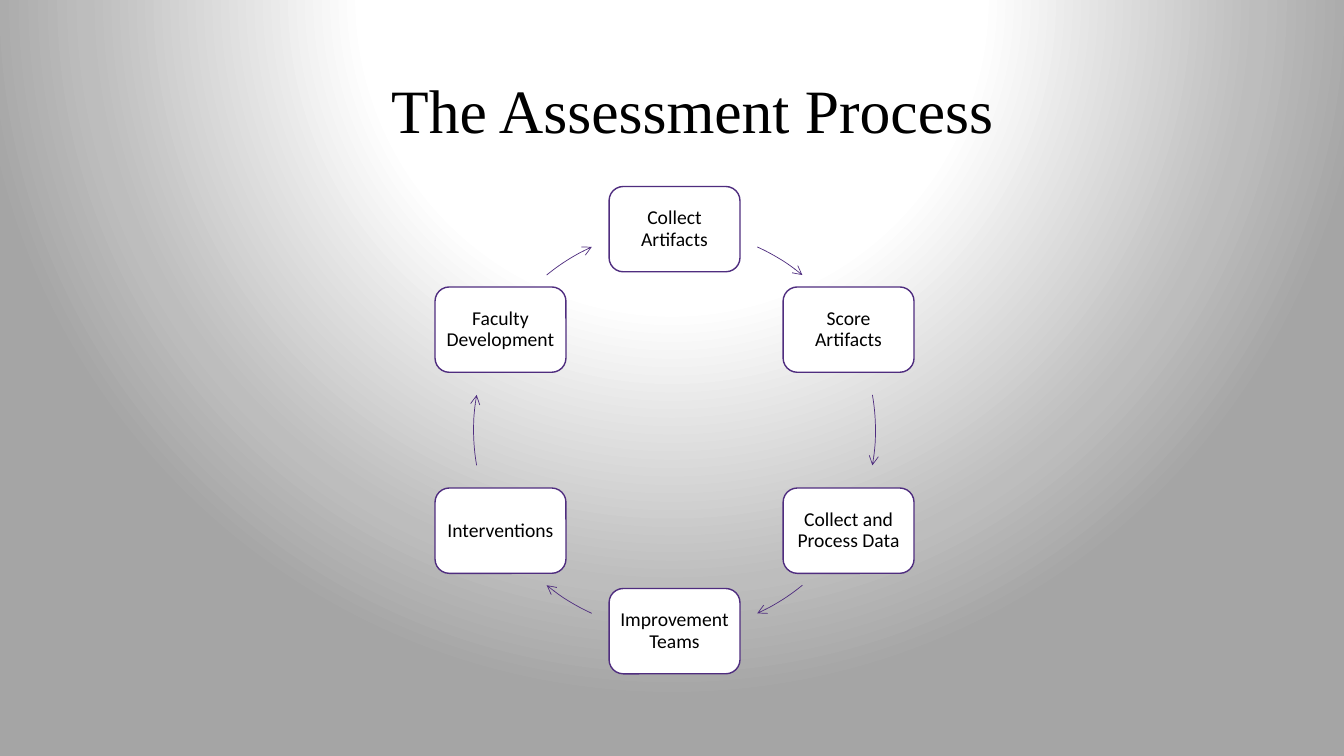
from math import cos, radians, sin
from pptx import Presentation
from pptx.dml.color import RGBColor
from pptx.enum.shapes import MSO_SHAPE
from pptx.enum.text import MSO_ANCHOR, PP_ALIGN
from pptx.oxml import parse_xml
from pptx.oxml.ns import nsdecls, qn
from pptx.util import Cm, Pt

PURPLE = "4F2D7F"
STEPS = ["Collect Artifacts", "Score Artifacts", "Collect and Process Data",
         "Improvement Teams", "Interventions", "Faculty Development"]
SPANS = [(24.3, 39.5), (79.9, 100.1), (140.5, 155.7)]
STOPS = [(0, "FFFFFF"), (40, "FFFFFF"), (76, "BDBDBD"), (91, "A5A5A5")]


def color(code):
    return RGBColor.from_string(code)


def backdrop(slide):
    slide.background.fill.gradient()
    old = next(slide.element.iter(qn("a:gradFill")))
    stops = "".join(f'<a:gs pos="{pos * 1000}"><a:srgbClr val="{code}"/></a:gs>'
                    for pos, code in STOPS)
    new = parse_xml(
        f'<a:gradFill {nsdecls("a")} rotWithShape="1"><a:gsLst>{stops}</a:gsLst>'
        '<a:path path="circle"><a:fillToRect l="50000" t="-80000" r="50000" '
        'b="180000"/></a:path></a:gradFill>')
    old.getparent().replace(old, new)


def write(frame, text, font, size):
    frame.word_wrap = True
    frame.vertical_anchor = MSO_ANCHOR.MIDDLE
    para = frame.paragraphs[0]
    para.text = text
    para.line_spacing = 0.9
    para.font.name = font
    para.font.size = Pt(size)
    para.font.color.rgb = color("000000")
    return para


def title(slide, left, top, width, height):
    box = slide.shapes.add_textbox(Cm(left), Cm(top), Cm(width), Cm(height))
    box.text_frame.margin_left = Cm(3.43)
    write(box.text_frame, "The Assessment Process", "Times New Roman", 44)


def shape(slide, kind, box, weight):
    item = slide.shapes.add_shape(kind, *map(Cm, box))
    item.shadow.inherit = False
    item.line.color.rgb = color(PURPLE)
    item.line.width = Pt(weight)
    return item


def node(slide, text, box):
    card = shape(slide, MSO_SHAPE.ROUNDED_RECTANGLE, box, 1)
    card.fill.solid()
    card.fill.fore_color.rgb = color("FFFFFF")
    frame = card.text_frame
    frame.margin_left = frame.margin_right = Cm(0.15)
    frame.margin_top = frame.margin_bottom = Cm(0.15)
    write(frame, text, "Calibri", 14).alignment = PP_ALIGN.CENTER


def arrow(slide, box, start, end):
    arc = shape(slide, MSO_SHAPE.ARC, box, 0.5)
    arc.fill.background()
    for i, angle in enumerate((start, end)):
        arc.adjustments[i] = (angle - 90) % 360 * 0.6
    arc.line._get_or_add_ln().append(
        parse_xml(f'<a:tailEnd {nsdecls("a")} type="arrow"/>'))


def cycle(slide, left, top, width, height):
    wide, high = 3.3, 2.15
    mid_x, mid_y = left + width / 2, top + height / 2
    radius = (height - high) / 2
    ring = (mid_x - radius, mid_y - radius, radius * 2, radius * 2)
    for i, text in enumerate(STEPS):
        turn = radians(i * 360 / len(STEPS))
        x, y = mid_x + radius * sin(turn), mid_y - radius * cos(turn)
        node(slide, text, (x - wide / 2, y - high / 2, wide, high))
        half, part = divmod(i, len(SPANS))
        start, end = SPANS[part]
        arrow(slide, ring, half * 180 + start, half * 180 + end)


def main():
    deck = Presentation()
    deck.slide_width, deck.slide_height = Cm(33.87), Cm(19.05)
    slide = deck.slides.add_slide(deck.slide_layouts[6])
    backdrop(slide)
    title(slide, 6.43, 1.02, 25.1, 3.68)
    cycle(slide, 10.97, 4.7, 12.06, 12.28)
    deck.save("out.pptx")


if __name__ == "__main__":
    main()
